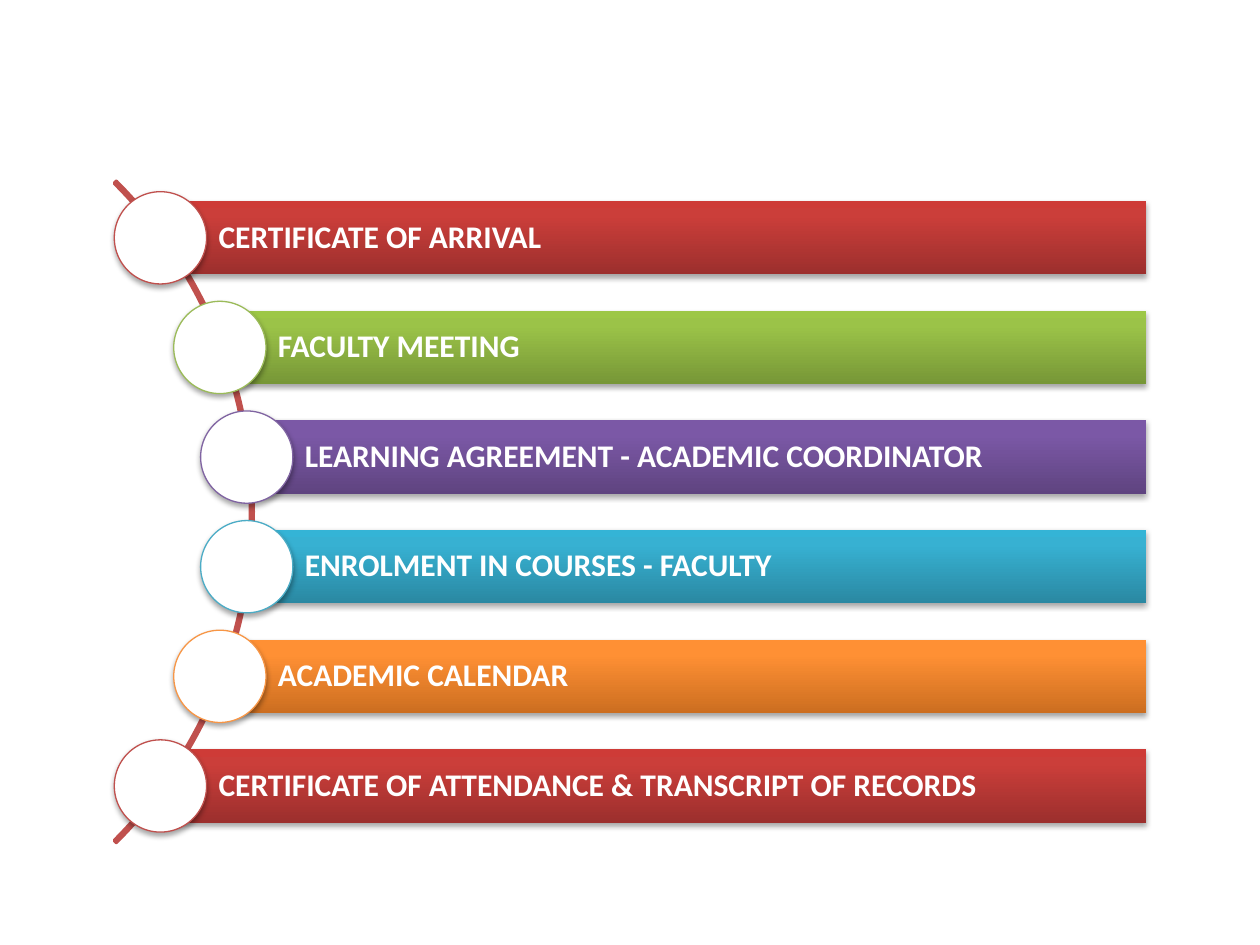
from copy import deepcopy
from math import sqrt

from lxml.etree import SubElement
from pptx import Presentation
from pptx.dml.color import RGBColor
from pptx.enum.shapes import MSO_SHAPE
from pptx.enum.text import MSO_ANCHOR, PP_ALIGN
from pptx.oxml.ns import qn
from pptx.util import Cm, Pt

RED = ("C0504D", "9C2F2D", "CB3E3A", "CE3B37")
GREEN = ("9BBB59", "779737", "9BC348", "9DC746")
PURPLE = ("8064A2", "5F4480", "7B58A6", "7C57A8")
BLUE = ("4BACC6", "2A88A2", "37B1D2", "34B4D6")
ORANGE = ("F79646", "CC6E20", "FF9034", "FF9136")

STEPS = [
    ("CERTIFICATE OF ARRIVAL", RED),
    ("FACULTY MEETING", GREEN),
    ("LEARNING AGREEMENT - ACADEMIC COORDINATOR", PURPLE),
    ("ENROLMENT IN COURSES - FACULTY", BLUE),
    ("ACADEMIC CALENDAR", ORANGE),
    ("CERTIFICATE OF ATTENDANCE & TRANSCRIPT OF RECORDS", RED),
]

CURVE_X, CURVE_Y = -4.32, 10.32
CURVE_SIZE = 18.85
MARKER_RADIUS = 9.36
STEP_PITCH = 2.21
BAR_RIGHT = 23.1
BAR_HEIGHT = 1.48
MARKER_SIZE = 1.86


def rgb(value):
    return RGBColor.from_string(value)


def add_outline(shape, color, width):
    shape.line.color.rgb = rgb(color)
    shape.line.width = Pt(width)


def add_shadow(shape):
    shape.shadow.inherit = False
    effects = shape._element.spPr.find(qn("a:effectLst"))
    shadow = SubElement(effects, qn("a:outerShdw"), blurRad="40000",
                        dist="23000", dir="5400000", rotWithShape="0")
    black = SubElement(shadow, qn("a:srgbClr"), val="000000")
    SubElement(black, qn("a:alpha"), val="35000")


def fill_gradient(shape, colors):
    shape.fill.gradient()
    shape.fill.gradient_angle = 90
    stop_list = shape._element.spPr.find(".//" + qn("a:gsLst"))
    stop_list.append(deepcopy(stop_list[-1]))
    for stop, position, color in zip(shape.fill.gradient_stops, (0, 0.8, 1), colors):
        stop.position = position
        stop.color.rgb = rgb(color)


def add_curve(slide):
    curve = slide.shapes.add_shape(
        MSO_SHAPE.BLOCK_ARC,
        Cm(CURVE_X - CURVE_SIZE / 2), Cm(CURVE_Y - CURVE_SIZE / 2),
        Cm(CURVE_SIZE), Cm(CURVE_SIZE))
    for index, value in enumerate((189, 27, 0.003)):
        curve.adjustments[index] = value
    curve.fill.background()
    add_outline(curve, "C0504D", 2)
    curve.shadow.inherit = False


def add_bar(slide, left, middle, label, colors):
    bar = slide.shapes.add_shape(
        MSO_SHAPE.RECTANGLE, Cm(left), Cm(middle - BAR_HEIGHT / 2),
        Cm(BAR_RIGHT - left), Cm(BAR_HEIGHT))
    fill_gradient(bar, colors)
    bar.line.fill.background()
    add_shadow(bar)
    frame = bar.text_frame
    frame.word_wrap = True
    frame.vertical_anchor = MSO_ANCHOR.MIDDLE
    frame.margin_left = Cm(1.17)
    frame.margin_top = frame.margin_right = frame.margin_bottom = Cm(0.13)
    frame.text = label
    paragraph = frame.paragraphs[0]
    paragraph.alignment = PP_ALIGN.JUSTIFY
    paragraph.line_spacing = 0.9
    font = paragraph.runs[0].font
    font.name = "Calibri"
    font.size = Pt(18)
    font.bold = True
    font.color.rgb = rgb("FFFFFF")


def add_marker(slide, center, middle, color):
    marker = slide.shapes.add_shape(
        MSO_SHAPE.OVAL, Cm(center - MARKER_SIZE / 2),
        Cm(middle - MARKER_SIZE / 2), Cm(MARKER_SIZE), Cm(MARKER_SIZE))
    marker.fill.solid()
    marker.fill.fore_color.rgb = rgb("FFFFFF")
    add_outline(marker, color, 0.75)
    add_shadow(marker)


def main():
    presentation = Presentation()
    presentation.slide_width = Cm(25.4)
    presentation.slide_height = Cm(19.05)
    slide = presentation.slides.add_slide(presentation.slide_layouts[6])
    add_curve(slide)
    for index, (label, (accent, *shades)) in enumerate(STEPS):
        offset = (index - (len(STEPS) - 1) / 2) * STEP_PITCH
        center = CURVE_X + sqrt(MARKER_RADIUS ** 2 - offset ** 2)
        add_bar(slide, center, CURVE_Y + offset, label, shades)
        add_marker(slide, center, CURVE_Y + offset, accent)
    presentation.save("out.pptx")


if __name__ == "__main__":
    main()
